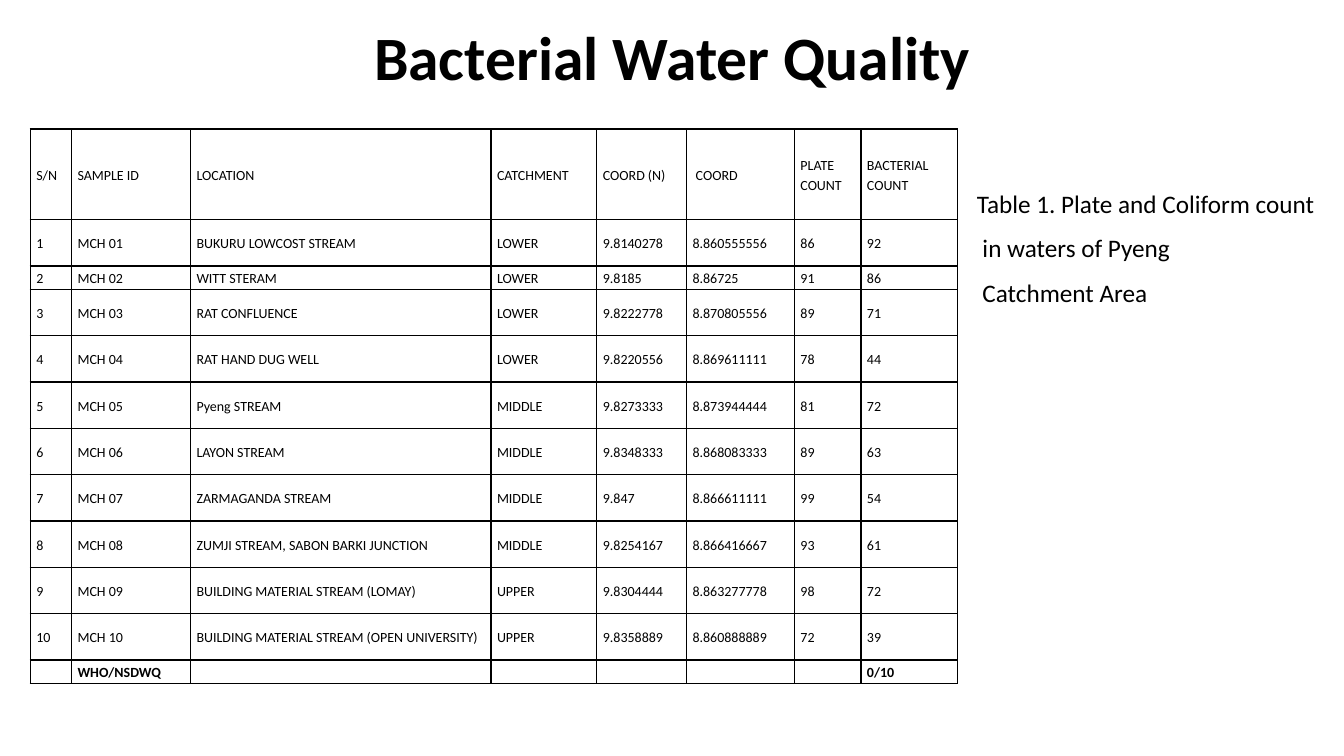
from lxml import etree
from pptx import Presentation
from pptx.dml.color import RGBColor
from pptx.enum.text import MSO_ANCHOR, PP_ALIGN
from pptx.oxml.ns import qn
from pptx.util import Inches, Pt

MIDDLE = MSO_ANCHOR.MIDDLE
CENTER = PP_ALIGN.CENTER
BLACK = RGBColor(0x00, 0x00, 0x00)
FONT = "Calibri"

TITLE = "Bacterial Water Quality"
CAPTION = [
    "Table 1. Plate and Coliform count",
    " in waters of Pyeng",
    " Catchment Area",
]
HEADINGS = ("S/N", "SAMPLE ID", "LOCATION", "CATCHMENT", "COORD (N)", " COORD",
            "PLATE COUNT", "BACTERIAL COUNT")
SAMPLES = [
    ("BUKURU LOWCOST STREAM", "LOWER", "9.8140278", "8.860555556", "86", "92"),
    ("WITT STERAM", "LOWER", "9.8185", "8.86725", "91", "86"),
    ("RAT CONFLUENCE", "LOWER", "9.8222778", "8.870805556", "89", "71"),
    ("RAT HAND DUG WELL", "LOWER", "9.8220556", "8.869611111", "78", "44"),
    ("Pyeng STREAM", "MIDDLE", "9.8273333", "8.873944444", "81", "72"),
    ("LAYON STREAM", "MIDDLE", "9.8348333", "8.868083333", "89", "63"),
    ("ZARMAGANDA STREAM", "MIDDLE", "9.847", "8.866611111", "99", "54"),
    ("ZUMJI STREAM, SABON BARKI JUNCTION", "MIDDLE", "9.8254167", "8.866416667", "93", "61"),
    ("BUILDING MATERIAL STREAM (LOMAY)", "UPPER", "9.8304444", "8.863277778", "98", "72"),
    ("BUILDING MATERIAL STREAM (OPEN UNIVERSITY)", "UPPER", "9.8358889", "8.860888889", "72", "39"),
]
STANDARD = ("", "WHO/NSDWQ", "", "", "", "", "", "0/10")

COLUMN_WIDTHS = (0.41, 1.18, 2.98, 1.05, 0.89, 1.07, 0.66, 0.96)
SPACER_HEIGHT, HEADING_HEIGHT, SAMPLE_HEIGHT, SHORT_HEIGHT = 0.21, 0.9, 0.46, 0.23
SHORT_SAMPLE = 2


def style(paragraph, size, bold=False):
    paragraph.font.name = FONT
    paragraph.font.size = Pt(size)
    paragraph.font.bold = bold
    paragraph.font.color.rgb = BLACK


def set_borders(cell, drawn_sides):
    properties = cell._tc.get_or_add_tcPr()
    for side in ("L", "R", "T", "B"):
        line = etree.SubElement(properties, qn("a:ln" + side), w=str(Pt(1)))
        if side in drawn_sides:
            fill = etree.SubElement(line, qn("a:solidFill"))
            etree.SubElement(fill, qn("a:srgbClr"), val=str(BLACK))
        else:
            etree.SubElement(line, qn("a:noFill"))


def fill_cell(cell, text, bold, drawn_sides):
    set_borders(cell, drawn_sides)
    cell.fill.background()
    cell.vertical_anchor = MIDDLE
    cell.margin_left = cell.margin_right = Inches(0.06)
    cell.margin_top = cell.margin_bottom = 0
    paragraph = cell.text_frame.paragraphs[0]
    paragraph.line_spacing = 1.15
    style(paragraph, 10, bold)
    if text:
        paragraph.add_run().text = text
    else:
        paragraph._p.get_or_add_endParaRPr().set("sz", "1000")


def add_title(slide):
    frame = slide.shapes.add_textbox(Inches(0.92), 0, Inches(11.5), Inches(1.21)).text_frame
    frame.word_wrap = True
    frame.vertical_anchor = MIDDLE
    paragraph = frame.paragraphs[0]
    paragraph.text = TITLE
    paragraph.alignment = CENTER
    paragraph.line_spacing = 0.9
    style(paragraph, 44, True)


def add_counts(slide):
    spacer = ("",) * len(HEADINGS)
    sample_rows = [(str(n), f"MCH {n:02}", *sample) for n, sample in enumerate(SAMPLES, 1)]
    rows = [spacer, HEADINGS, *sample_rows, STANDARD]
    sample_heights = [SHORT_HEIGHT if n == SHORT_SAMPLE else SAMPLE_HEIGHT
                      for n in range(1, len(SAMPLES) + 1)]
    heights = [SPACER_HEIGHT, HEADING_HEIGHT, *sample_heights, SHORT_HEIGHT]
    counts = slide.shapes.add_table(
        len(rows), len(HEADINGS), Inches(0.3), Inches(1.07),
        Inches(sum(COLUMN_WIDTHS)), Inches(sum(heights))).table
    counts.first_row = False
    counts.horz_banding = False
    for column, width in zip(counts.columns, COLUMN_WIDTHS):
        column.width = Inches(width)
    for r, (values, height) in enumerate(zip(rows, heights)):
        counts.rows[r].height = Inches(height)
        for c, value in enumerate(values):
            fill_cell(counts.cell(r, c), value, values is STANDARD, "B" if r == 0 else "LRTB")
    counts.cell(0, 0).merge(counts.cell(0, len(HEADINGS) - 2))


def add_caption(slide):
    frame = slide.shapes.add_textbox(
        Inches(9.59), Inches(1.82), Inches(6.67), Inches(1.29)).text_frame
    frame.word_wrap = True
    for i, line in enumerate(CAPTION):
        paragraph = frame.add_paragraph() if i else frame.paragraphs[0]
        paragraph.text = line
        paragraph.space_after = Pt(10)
        style(paragraph, 18)


def main():
    deck = Presentation()
    deck.slide_width, deck.slide_height = Inches(13.33), Inches(7.5)
    slide = deck.slides.add_slide(deck.slide_layouts[6])
    add_title(slide)
    add_counts(slide)
    add_caption(slide)
    deck.save("out.pptx")


if __name__ == "__main__":
    main()
